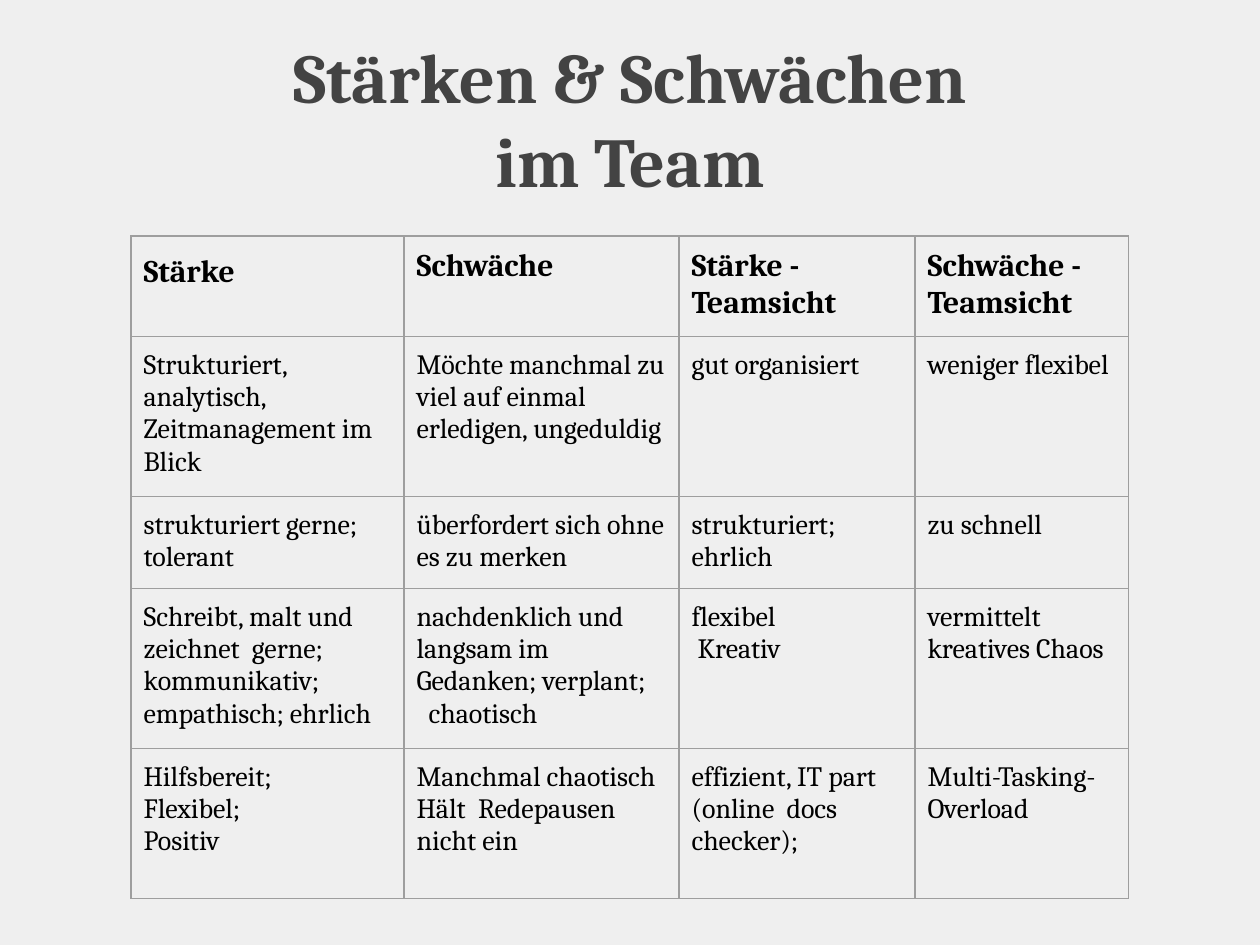
from lxml import etree
from pptx import Presentation
from pptx.dml.color import RGBColor
from pptx.enum.text import MSO_ANCHOR, PP_ALIGN
from pptx.oxml.ns import qn
from pptx.util import Pt

CENTER, LEFT = PP_ALIGN.CENTER, PP_ALIGN.LEFT
MIDDLE, TOP = MSO_ANCHOR.MIDDLE, MSO_ANCHOR.TOP

# Content: a cell is a list of paragraphs, (text, indent) where indented
TITLE = ["Stärken & Schwächen", "im Team"]
HEAD = [["Stärke"], ["Schwäche"], ["Stärke - Teamsicht"], ["Schwäche - Teamsicht"]]
BODY = [
    [["Strukturiert, analytisch, Zeitmanagement im Blick"],
     ["Möchte manchmal zu viel auf einmal erledigen, ungeduldig"],
     ["gut organisiert"],
     ["weniger flexibel"]],
    [["strukturiert gerne; tolerant"],
     ["überfordert sich ohne es zu merken"],
     ["strukturiert; ehrlich"],
     ["zu schnell"]],
    [["Schreibt, malt und zeichnet  gerne; kommunikativ; empathisch; ehrlich"],
     ["nachdenklich und langsam im Gedanken; verplant;", ("chaotisch", 12)],
     ["flexibel", ("Kreativ", 6)],
     ["vermittelt kreatives Chaos"]],
    [["Hilfsbereit;", "Flexibel;", "Positiv"],
     ["Manchmal chaotisch", "Hält  Redepausen nicht ein"],
     ["effizient, IT part (online  docs checker);"],
     ["Multi-Tasking- Overload"]],
]

# Layout in px
SLIDE = (1260, 945)
TITLE_BOX = (63, 38, 1134, 158)
ORIGIN = (131, 236)
COLS = [273, 275, 236, 214]
ROWS = [99, 157, 92, 157, 150]
INSET = 12.6

THEME = {
    "font": "Cambria", "bg": "EFEFEF", "title": "434343", "text": "000000",
    "line": "9E9E9E", "title_pt": 40, "head_pt": 18, "body_pt": 16, "line_pt": 0.75,
}


def px(n):
    return round(n * 914400 / 126)


def write(frame, paras, size, color, bold, align=LEFT):
    for i, item in enumerate(paras):
        text, indent = item if isinstance(item, tuple) else (item, 0)
        para = frame.paragraphs[0] if i == 0 else frame.add_paragraph()
        para.text = text
        para.alignment = align
        if indent:
            para._p.get_or_add_pPr().set("marL", str(px(indent)))
        font = para.font
        font.name, font.size, font.bold = THEME["font"], Pt(size), bold
        font.color.rgb = RGBColor.from_string(color)


def pad(box):
    box.margin_left = box.margin_right = px(INSET)
    box.margin_top = box.margin_bottom = px(INSET)


def border(cell):
    props = cell._tc.get_or_add_tcPr()
    for side in ("lnL", "lnR", "lnT", "lnB"):
        line = etree.SubElement(props, qn("a:" + side), w=str(Pt(THEME["line_pt"])))
        fill = etree.SubElement(line, qn("a:solidFill"))
        etree.SubElement(fill, qn("a:srgbClr"), val=THEME["line"])


deck = Presentation()
deck.slide_width, deck.slide_height = map(px, SLIDE)
slide = deck.slides.add_slide(deck.slide_layouts[6])
back = slide.background.fill
back.solid()
back.fore_color.rgb = RGBColor.from_string(THEME["bg"])

# Title
frame = slide.shapes.add_textbox(*map(px, TITLE_BOX)).text_frame
frame.word_wrap = True
frame.vertical_anchor = MIDDLE
pad(frame)
write(frame, TITLE, THEME["title_pt"], THEME["title"], True, CENTER)

# Table
rows = [HEAD] + BODY
area = map(px, (*ORIGIN, sum(COLS), sum(ROWS)))
table = slide.shapes.add_table(len(ROWS), len(COLS), *area).table
table.first_row = table.horz_banding = False
for col, width in zip(table.columns, COLS):
    col.width = px(width)
for r, (row, height) in enumerate(zip(rows, ROWS)):
    table.rows[r].height = px(height)
    head = r == 0
    size = THEME["head_pt"] if head else THEME["body_pt"]
    for c, paras in enumerate(row):
        cell = table.cell(r, c)
        pad(cell)
        cell.vertical_anchor = TOP
        border(cell)
        cell.fill.background()
        write(cell.text_frame, paras, size, THEME["text"], head)
table.cell(0, 0).text_frame.paragraphs[0].line_spacing = 1.15

deck.save("out.pptx")
